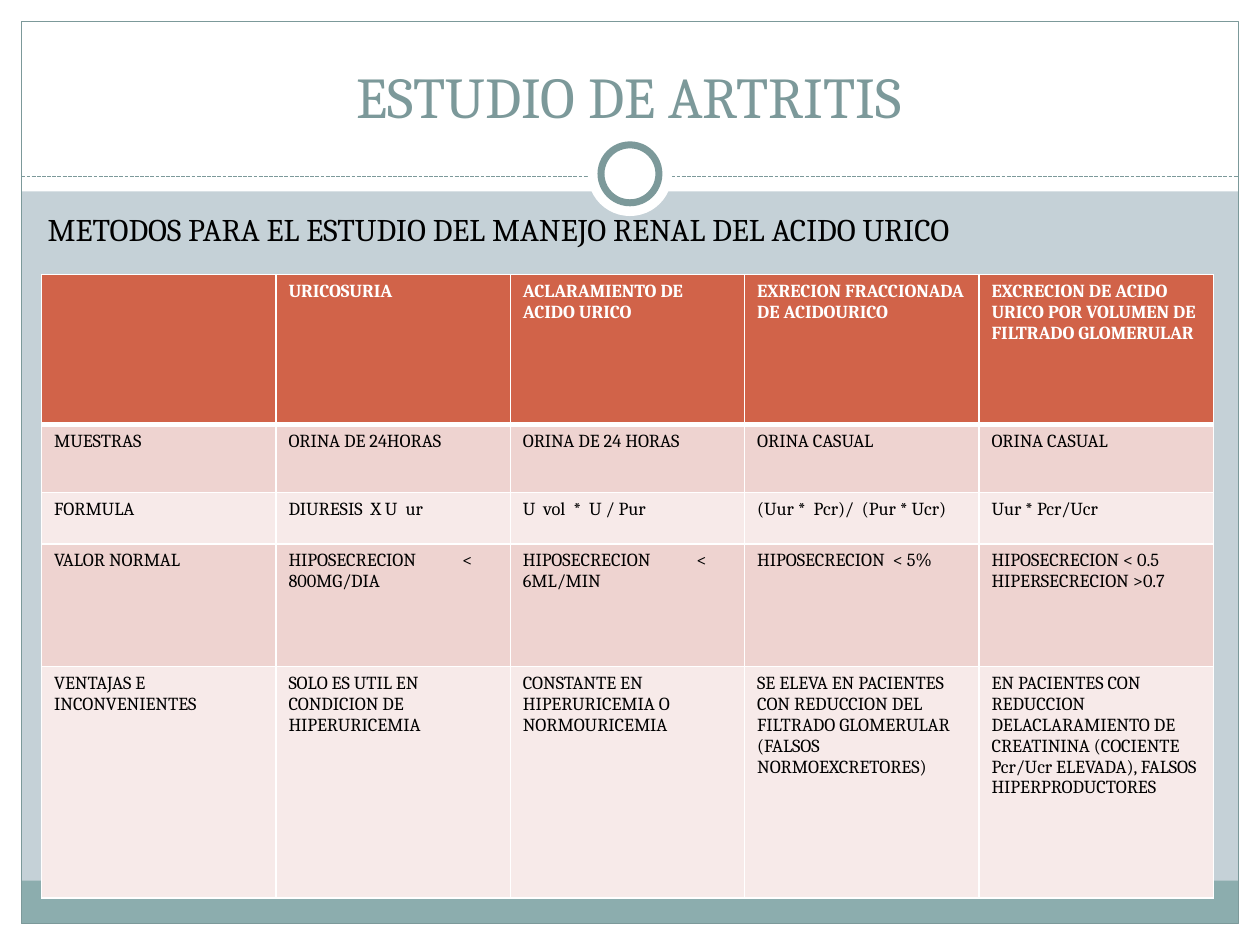
from lxml import etree
from pptx import Presentation
from pptx.dml.color import RGBColor
from pptx.enum.dml import MSO_LINE
from pptx.enum.shapes import MSO_CONNECTOR, MSO_SHAPE
from pptx.enum.text import MSO_ANCHOR, PP_ALIGN
from pptx.oxml.ns import qn
from pptx.util import Inches, Pt

RECT, OVAL = MSO_SHAPE.RECTANGLE, MSO_SHAPE.OVAL
STRAIGHT, DASH = MSO_CONNECTOR.STRAIGHT, MSO_LINE.SQUARE_DOT
TOP, BOTTOM = MSO_ANCHOR.TOP, MSO_ANCHOR.BOTTOM
LEFT, CENTER = PP_ALIGN.LEFT, PP_ALIGN.CENTER

WHITE = RGBColor(0xFF, 0xFF, 0xFF)
BLACK = RGBColor(0x00, 0x00, 0x00)
MIST = RGBColor(0xC5, 0xD1, 0xD7)
TEAL = RGBColor(0x8C, 0xAD, 0xAE)
SLATE = RGBColor(0x7C, 0x99, 0x9A)
RUST = RGBColor(0xD1, 0x63, 0x49)
ROSE = RGBColor(0xEE, 0xD3, 0xD0)
PALE_ROSE = RGBColor(0xF7, 0xEA, 0xE9)
FONT = "Cambria"

prs = Presentation()
prs.slide_width, prs.slide_height = Inches(10), Inches(7.5)
slide = prs.slides.add_slide(prs.slide_layouts[6])
slide.background.fill.solid()
slide.background.fill.fore_color.rgb = MIST

# The slide is a grid of 1000 columns by 750 rows of square units.
COLS, ROWS = 1000, 750
UNIT = prs.slide_width // COLS
MARGIN = 17
INNER = COLS - 2 * MARGIN
RULE_Y = 140
HEADER_H = 152
FOOTER_H = 34


def style_text(paragraph, size, color, bold=False):
    for run in paragraph.runs:
        run.font.name = FONT
        run.font.size = Pt(size)
        run.font.bold = bold
        run.font.color.rgb = color


def add_border(cell, side, width):
    """Give one side (L, R, T or B) of a cell a white line, before its fill is set."""
    line = etree.SubElement(cell._tc.get_or_add_tcPr(), qn(f"a:ln{side}"), w=str(Pt(width)))
    solid = etree.SubElement(line, qn("a:solidFill"))
    etree.SubElement(solid, qn("a:srgbClr"), val=str(WHITE))


# Frame: white margins and header, footer band, outline
panels = [
    (0, ROWS - MARGIN, COLS, MARGIN, WHITE),
    (0, 0, COLS, HEADER_H, WHITE),
    (0, 0, MARGIN, ROWS, WHITE),
    (COLS - MARGIN, 0, MARGIN, ROWS, WHITE),
    (MARGIN, ROWS - MARGIN - FOOTER_H, INNER, FOOTER_H, TEAL),
    (MARGIN, MARGIN, INNER, ROWS - 2 * MARGIN, None),
]
for *place, color in panels:
    panel = slide.shapes.add_shape(RECT, *(n * UNIT for n in place))
    panel.shadow.inherit = False
    if color is None:
        panel.fill.background()
        panel.line.color.rgb = SLATE
        panel.line.width = Pt(0.75)
    else:
        panel.fill.solid()
        panel.fill.fore_color.rgb = color
        panel.line.fill.background()

rule = slide.shapes.add_connector(
    STRAIGHT, MARGIN * UNIT, RULE_Y * UNIT, (COLS - MARGIN) * UNIT, RULE_Y * UNIT)
rule.line.color.rgb = SLATE
rule.line.width = Pt(0.75)
rule.line.dash_style = DASH
etree.SubElement(rule._element.spPr, qn("a:effectLst"))

# Ring on the rule: white halo below, outlined circle above
RING_Y = 138
for diameter, outline in [(67, 0), (46, 4)]:
    circle = slide.shapes.add_shape(
        OVAL, (COLS - diameter) * UNIT // 2, RING_Y * UNIT - diameter * UNIT // 2,
        diameter * UNIT, diameter * UNIT)
    circle.shadow.inherit = False
    circle.fill.solid()
    circle.fill.fore_color.rgb = WHITE
    if outline:
        circle.line.color.rgb = SLATE
        circle.line.width = Pt(outline)
    else:
        circle.line.fill.background()

# Title and subtitle
headings = [
    ("ESTUDIO DE ARTRITIS", (33, 25, 933, 83), 33, SLATE, CENTER, BOTTOM),
    ("METODOS PARA EL ESTUDIO DEL MANEJO RENAL DEL ACIDO URICO",
     (28, 162, 937, 40), 18, BLACK, LEFT, TOP),
]
for text, place, size, color, align, anchor in headings:
    frame = slide.shapes.add_textbox(*(n * UNIT for n in place)).text_frame
    frame.word_wrap = True
    frame.vertical_anchor = anchor
    frame.text = text
    frame.paragraphs[0].alignment = align
    style_text(frame.paragraphs[0], size, color)

# Table of methods
methods = [
    ["", "URICOSURIA", "ACLARAMIENTO DE ACIDO URICO",
     "EXRECION FRACCIONADA DE ACIDOURICO",
     "EXCRECION DE ACIDO URICO POR VOLUMEN DE FILTRADO GLOMERULAR"],
    ["MUESTRAS", "ORINA DE 24HORAS", "ORINA DE 24 HORAS", "ORINA CASUAL", "ORINA CASUAL"],
    ["FORMULA", "DIURESIS  X U  ur", "U  vol  *  U / Pur",
     "(Uur *  Pcr)/  (Pur * Ucr)", "Uur * Pcr/Ucr"],
    ["VALOR NORMAL", "HIPOSECRECION\t< 800MG/DIA", "HIPOSECRECION\t< 6ML/MIN",
     "HIPOSECRECION  < 5%", "HIPOSECRECION < 0.5\nHIPERSECRECION >0.7"],
    ["VENTAJAS E INCONVENIENTES", "SOLO ES UTIL EN CONDICION DE HIPERURICEMIA",
     "CONSTANTE EN HIPERURICEMIA O NORMOURICEMIA",
     "SE ELEVA EN PACIENTES CON REDUCCION DEL FILTRADO GLOMERULAR "
     "(FALSOS NORMOEXCRETORES)",
     "EN PACIENTES CON REDUCCION DELACLARAMIENTO DE CREATININA "
     "(COCIENTE Pcr/Ucr ELEVADA), FALSOS HIPERPRODUCTORES"],
]
row_heights = [119, 54, 41, 97, 184]
COLUMN_W = 186
SIGN_TAB = 138

table = slide.shapes.add_table(
    len(methods), len(methods[0]), 33 * UNIT, 218 * UNIT,
    COLUMN_W * len(methods[0]) * UNIT, sum(row_heights) * UNIT).table
for column in table.columns:
    column.width = COLUMN_W * UNIT
for r, (height, texts) in enumerate(zip(row_heights, methods)):
    table.rows[r].height = height * UNIT
    is_header = r == 0
    for c, text in enumerate(texts):
        cell = table.cell(r, c)
        add_border(cell, "L", 1)
        add_border(cell, "R", 1)
        add_border(cell, "T", 3 if r == 1 else 1)
        add_border(cell, "B", 3 if is_header else 1)
        cell.fill.solid()
        cell.fill.fore_color.rgb = RUST if is_header else (ROSE if r % 2 else PALE_ROSE)
        cell.text_frame.text = text
        for paragraph in cell.text_frame.paragraphs:
            style_text(paragraph, 10.5, WHITE if is_header else BLACK, bold=is_header)
            if "\t" in text:
                tabs = etree.SubElement(paragraph._p.get_or_add_pPr(), qn("a:tabLst"))
                etree.SubElement(tabs, qn("a:tab"), pos=str(SIGN_TAB * UNIT), algn="l")

prs.save("out.pptx")
